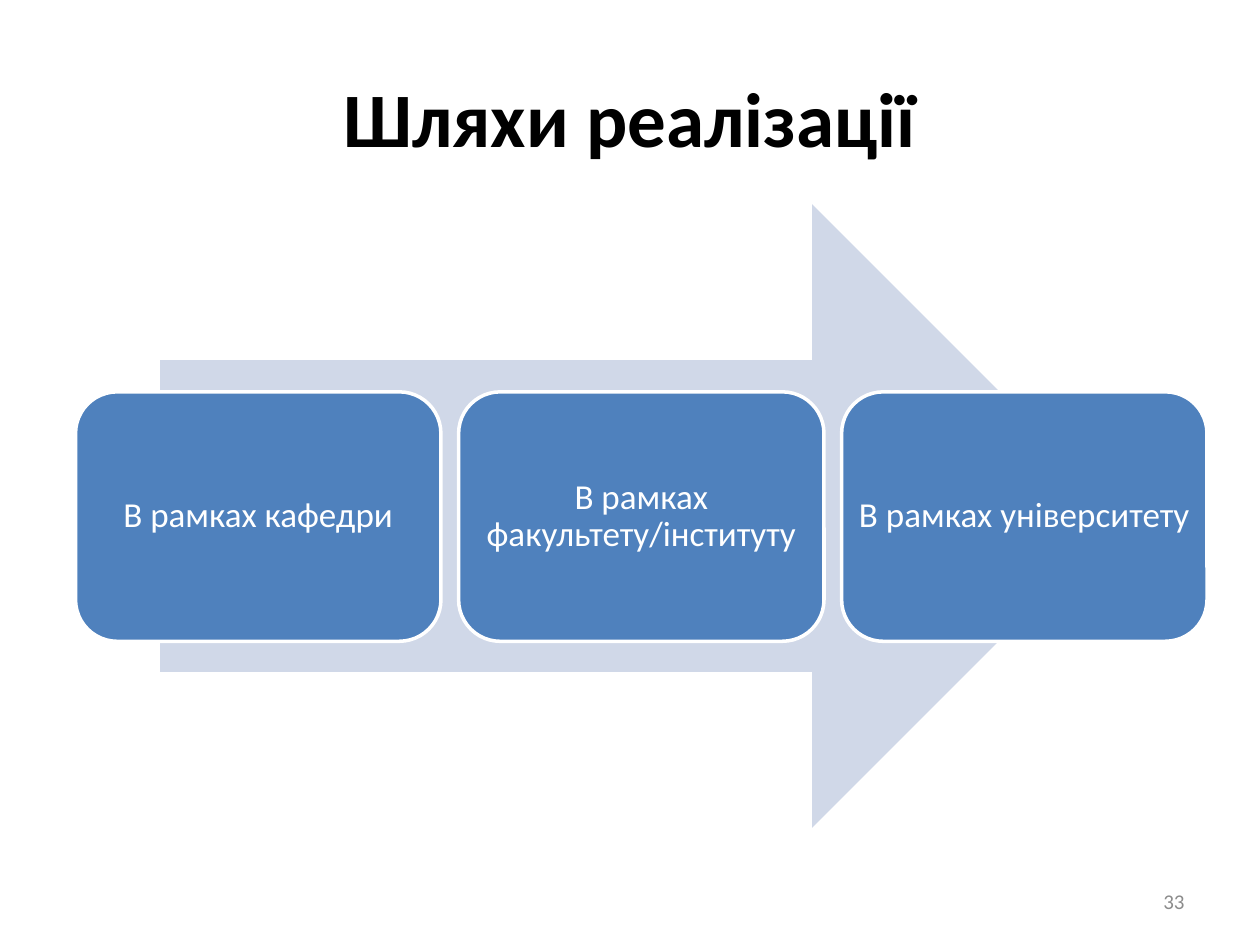
import pptx
import pptx.dml.color
import pptx.enum.shapes
import pptx.enum.text
import pptx.util

Inches = pptx.util.Inches
Pt = pptx.util.Pt
RGBColor = pptx.dml.color.RGBColor
Align = pptx.enum.text.PP_ALIGN
ShapeType = pptx.enum.shapes.MSO_SHAPE

BLACK = RGBColor(0x00, 0x00, 0x00)
WHITE = RGBColor(0xFF, 0xFF, 0xFF)
BLUE = RGBColor(0x4F, 0x81, 0xBD)
PALE_BLUE = RGBColor(0xD0, 0xD8, 0xE8)
GRAY = RGBColor(0x8C, 0x8C, 0x8C)


class SlideBuilder:
    font_name = "Calibri"
    outline_width = Pt(2)

    def __init__(self, slide):
        self.slide = slide

    def set_attributes(self, target, values):
        for name, value in values.items():
            setattr(target, name, value)

    def fill_text(self, shape, text, size, color, alignment=Align.CENTER, bold=False, **spacing):
        frame = shape.text_frame
        self.set_attributes(frame, {
            "word_wrap": True,
            "vertical_anchor": pptx.enum.text.MSO_ANCHOR.MIDDLE,
        })
        paragraph = frame.paragraphs[0]
        self.set_attributes(paragraph, {"alignment": alignment, **spacing})
        run = paragraph.add_run()
        run.text = text
        self.set_attributes(run.font, {"name": self.font_name, "size": Pt(size), "bold": bold})
        run.font.color.rgb = color

    def text(self, left, top, width, height, text, size, color, **style):
        box = self.slide.shapes.add_textbox(
            Inches(left), Inches(top), Inches(width), Inches(height))
        self.fill_text(box, text, size, color, **style)

    def shape(self, kind, left, top, width, height, color):
        shape = self.slide.shapes.add_shape(
            kind, Inches(left), Inches(top), Inches(width), Inches(height))
        shape.shadow.inherit = False
        shape.fill.solid()
        shape.fill.fore_color.rgb = color
        shape.line.fill.background()
        return shape

    def arrow(self, left, top, width, height):
        self.shape(ShapeType.RIGHT_ARROW, left, top, width, height, PALE_BLUE)

    def card(self, left, top, width, height, text):
        card = self.shape(ShapeType.ROUNDED_RECTANGLE, left, top, width, height, BLUE)
        card.line.color.rgb = WHITE
        card.line.width = self.outline_width
        self.set_attributes(card.text_frame, {"margin_left": 0, "margin_right": 0})
        self.fill_text(card, text, 20, WHITE, line_spacing=0.9)


def main():
    presentation = pptx.Presentation()
    presentation.slide_width = Inches(10)
    presentation.slide_height = Inches(7.5)
    builder = SlideBuilder(presentation.slides.add_slide(presentation.slide_layouts[6]))

    builder.text(0.5, 0.3, 9, 1.25, "Шляхи реалізації", 44, BLACK, bold=True)
    builder.arrow(1.27, 1.62, 7.65, 4.95)
    levels = ["В рамках кафедри", "В рамках факультету/інституту", "В рамках університету"]
    card_width, gap = 2.9, 0.14
    for index, level in enumerate(levels):
        builder.card(0.6 + index * (card_width + gap), 3.11, card_width, 1.98, level)
    builder.text(7.17, 6.95, 2.33, 0.4, "33", 12, GRAY, alignment=Align.RIGHT)

    presentation.save("out.pptx")


if __name__ == "__main__":
    main()
